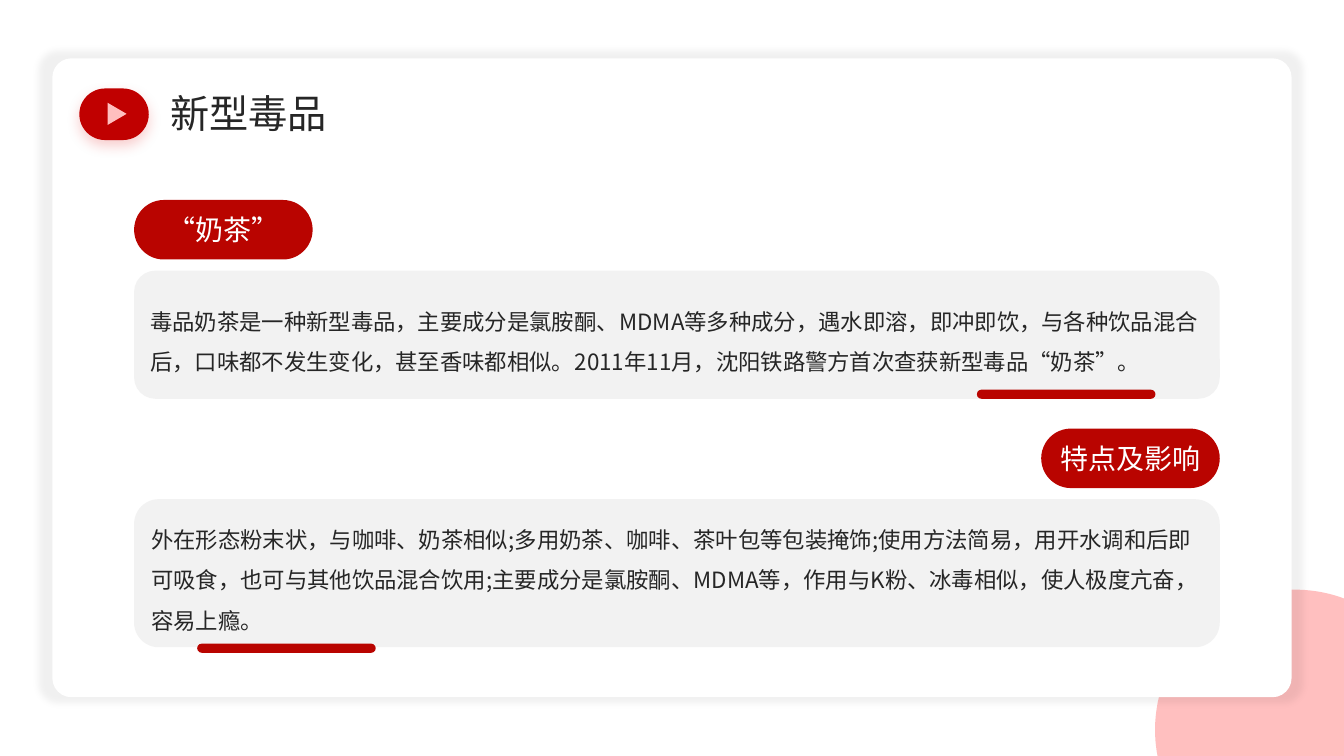
from math import asin, acos, cos, pi, sin

from lxml import etree
from pptx import Presentation
from pptx.dml.color import RGBColor
from pptx.enum.shapes import MSO_SHAPE
from pptx.enum.text import MSO_ANCHOR, PP_ALIGN
from pptx.oxml.ns import qn
from pptx.util import Cm, Pt

RED = RGBColor(0xB9, 0x04, 0x00)
BADGE_RED = RGBColor(0xC0, 0x00, 0x00)
PINK = RGBColor(0xFF, 0xBF, 0xBF)
WHITE = RGBColor(0xFF, 0xFF, 0xFF)
PANEL_GREY = RGBColor(0xF2, 0xF2, 0xF2)
INK = RGBColor(0x26, 0x26, 0x26)
FONT = "Noto Sans CJK SC"

SLIDE_W, SLIDE_H = 33.87, 19.05
LABEL_W, LABEL_H = 4.5, 1.5
LABEL_RISE = 1.78
MARK_H = 0.23


def style(shape, color):
    shape.shadow.inherit = False
    shape.fill.solid()
    shape.fill.fore_color.rgb = color
    shape.line.fill.background()
    return shape


def add_block(slide, kind, box, color, corner=None):
    shape = slide.shapes.add_shape(kind, *map(Cm, box))
    if corner is not None:
        shape.adjustments[0] = corner
    return style(shape, color)


def add_pill(slide, box, color):
    return add_block(slide, MSO_SHAPE.ROUNDED_RECTANGLE, box, color, 0.5)


def cast_shadow(shape, color, alpha, blur, distance=0, angle=0, scale=100):
    """Alpha and scale in percent, blur and distance in points."""
    effects = shape._element.spPr.find(qn("a:effectLst"))
    shadow = etree.SubElement(
        effects, qn("a:outerShdw"), blurRad=str(Pt(blur)), dist=str(Pt(distance)),
        dir=str(angle * 60000), sx=str(scale * 1000), sy=str(scale * 1000),
        algn="ctr", rotWithShape="0")
    tint = etree.SubElement(shadow, qn("a:srgbClr"), val=str(color))
    etree.SubElement(tint, qn("a:alpha"), val=str(alpha * 1000))


def write(shape, text, size, color, align=PP_ALIGN.LEFT, spacing=None,
          anchor=MSO_ANCHOR.MIDDLE, wrap=True):
    frame = shape.text_frame
    frame.word_wrap = wrap
    frame.vertical_anchor = anchor
    paragraph = frame.paragraphs[0]
    paragraph.alignment = align
    paragraph.line_spacing = spacing
    run = paragraph.add_run()
    run.text = text
    run.font.size = Pt(size)
    run.font.name = FONT
    run.font.color.rgb = color
    etree.SubElement(run.font._element, qn("a:ea"), typeface=FONT)


def add_corner_disc(slide, center_x, center_y, radius, steps=60):
    """Disc cut off by the right and bottom edges of the slide."""
    start = pi - asin((SLIDE_H - center_y) / radius)
    end = 2 * pi - acos((SLIDE_W - center_x) / radius)
    angles = [start + (end - start) * i / steps for i in range(steps + 1)]
    rim = [(Cm(center_x + radius * cos(a)), Cm(center_y + radius * sin(a)))
           for a in angles]
    outline = slide.shapes.build_freeform(*rim[0])
    outline.add_line_segments(rim[1:] + [(Cm(SLIDE_W), Cm(SLIDE_H))], close=True)
    style(outline.convert_to_shape(), PINK)


def add_background(slide):
    add_corner_disc(slide, 32.64, 18.39, 3.53)
    card = add_block(slide, MSO_SHAPE.ROUNDED_RECTANGLE,
                     (1.32, 1.47, 31.23, 16.1), WHITE, 0.03)
    cast_shadow(card, RGBColor(0, 0, 0), alpha=5, blur=5, scale=102)


def add_header(slide, left, top, title):
    badge = add_pill(slide, (left, top, 1.75, 1.3), BADGE_RED)
    cast_shadow(badge, RGBColor(0xDE, 0, 0), alpha=20, blur=10, distance=4, angle=90)
    play = add_block(slide, MSO_SHAPE.ISOSCELES_TRIANGLE,
                     (left + 0.67, top + 0.4, 0.56, 0.48), PINK)
    play.rotation = 90
    heading = slide.shapes.add_textbox(Cm(left + 2.04), Cm(top - 0.11), Cm(4.5), Cm(1.45))
    write(heading, title, size=28, color=INK, anchor=MSO_ANCHOR.TOP, wrap=False)


def add_section(slide, box, label, body, label_offset, mark_offset):
    """Grey panel with a label above it and a red mark; offsets run from the panel's left and top."""
    left, top, _, _ = box
    mark_x, mark_y = mark_offset
    panel = add_block(slide, MSO_SHAPE.ROUNDED_RECTANGLE, box, PANEL_GREY)
    write(panel, body, size=16, color=INK, spacing=1.5)
    add_pill(slide, (left + mark_x, top + mark_y, LABEL_W, MARK_H), RED)
    tag = add_pill(slide, (left + label_offset, top - LABEL_RISE, LABEL_W, LABEL_H), RED)
    write(tag, label, size=20, color=WHITE, align=PP_ALIGN.CENTER)


def main():
    deck = Presentation()
    deck.slide_width, deck.slide_height = Cm(SLIDE_W), Cm(SLIDE_H)
    slide = deck.slides.add_slide(deck.slide_layouts[6])
    add_background(slide)
    add_header(slide, 2, 2.23, "新型毒品")

    panel_left, panel_w = 3.38, 27.36
    add_section(
        slide, (panel_left, 6.82, panel_w, 3.23), "“奶茶”",
        "毒品奶茶是一种新型毒品，主要成分是氯胺酮、MDMA等多种成分，遇水即溶，即冲即饮，"
        "与各种饮品混合后，口味都不发生变化，甚至香味都相似。"
        "2011年11月，沈阳铁路警方首次查获新型毒品“奶茶”。",
        label_offset=0, mark_offset=(21.24, 3))
    add_section(
        slide, (panel_left, 12.58, panel_w, 3.73), "特点及影响",
        "外在形态粉末状，与咖啡、奶茶相似;多用奶茶、咖啡、茶叶包等包装掩饰;"
        "使用方法简易，用开水调和后即可吸食，也可与其他饮品混合饮用;"
        "主要成分是氯胺酮、MDMA等，作用与K粉、冰毒相似，使人极度亢奋，容易上瘾。",
        label_offset=panel_w - LABEL_W, mark_offset=(1.59, 3.64))
    deck.save("out.pptx")


if __name__ == "__main__":
    main()
